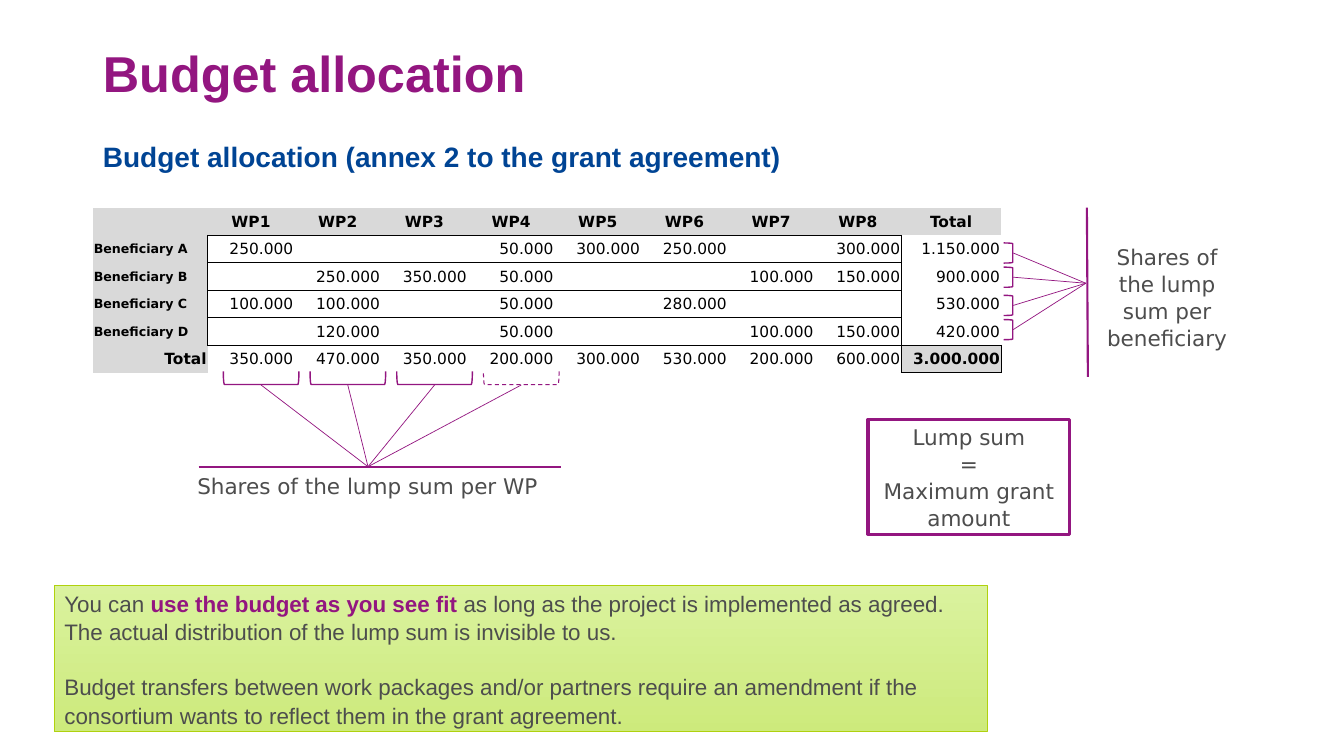
from lxml.etree import SubElement
from pptx import Presentation
from pptx.dml.color import RGBColor
from pptx.enum.dml import MSO_LINE
from pptx.enum.shapes import MSO_CONNECTOR, MSO_SHAPE
from pptx.enum.text import MSO_ANCHOR, MSO_AUTO_SIZE, PP_ALIGN
from pptx.oxml.ns import qn
from pptx.util import Inches, Pt

COLORS = {
    "purple": "931680", "blue": "004494", "gray": "4D4D4D", "black": "000000",
    "white": "FFFFFF", "shade": "D9D9D9", "lime_top": "DAF29E",
    "lime_bottom": "CDEA7C", "lime_edge": "B0D10E",
}
SANS, CAPTION = "Arial", "DejaVu Sans"
FIRST_WIDTH, PACKAGE_WIDTH, TOTAL_WIDTH, ROW_HEIGHT = 1.14, 0.86, 0.99, 0.273
BUDGET = [
    ["", "WP1", "WP2", "WP3", "WP4", "WP5", "WP6", "WP7", "WP8", "Total"],
    ["Beneficiary A", "250.000", "", "", "50.000", "300.000", "250.000", "", "300.000", "1.150.000"],
    ["Beneficiary B", "", "250.000", "350.000", "50.000", "", "", "100.000", "150.000", "900.000"],
    ["Beneficiary C", "100.000", "100.000", "", "50.000", "", "280.000", "", "", "530.000"],
    ["Beneficiary D", "", "120.000", "", "50.000", "", "", "100.000", "150.000", "420.000"],
    ["Total", "350.000", "470.000", "350.000", "200.000", "300.000", "530.000", "200.000", "600.000",
     "3.000.000"],
]


def color(name):
    return RGBColor.from_string(COLORS[name])


def add_span(para, text, size, font, tint, bold=False):
    span = para.add_run()
    span.text = text
    span.font.size = Pt(size)
    span.font.name = font
    span.font.bold = bold
    span.font.color.rgb = color(tint)


def add_line(page, start, end, width):
    line = page.shapes.add_connector(
        MSO_CONNECTOR.STRAIGHT, *(Inches(value) for value in (*start, *end)))
    line.line.color.rgb = color("purple")
    line.line.width = Pt(width)
    SubElement(line._element.spPr, qn("a:effectLst"))


def add_box(page, kind, left, top, width, height, edge, edge_width):
    box = page.shapes.add_shape(
        kind, Inches(left), Inches(top), Inches(width), Inches(height))
    box.shadow.inherit = False
    box.fill.solid()
    box.fill.fore_color.rgb = color("white")
    box.line.color.rgb = color(edge)
    box.line.width = Pt(edge_width)
    return box


def add_bracket(page, center_x, center_y, width, height, rotation, dashed=False):
    bracket = add_box(page, MSO_SHAPE.LEFT_BRACKET, center_x - width / 2,
                      center_y - height / 2, width, height, "purple", 0.75 if dashed else 1)
    bracket.rotation = rotation
    if dashed:
        bracket.fill.background()
        bracket.line.dash_style = MSO_LINE.DASH


def write_caption(frame, lines):
    frame.word_wrap = True
    for index, text in enumerate(lines):
        para = frame.add_paragraph() if index else frame.paragraphs[0]
        para.alignment = PP_ALIGN.CENTER
        para.line_spacing = 1.04
        add_span(para, text, 15.4, CAPTION, "gray")


def add_caption(page, left, top, width, height, text):
    box = page.shapes.add_textbox(
        Inches(left), Inches(top), Inches(width), Inches(height))
    write_caption(box.text_frame, [text])


def fill_placeholder(holder, left, top, width, height, text, size, tint):
    holder.left, holder.top = Inches(left), Inches(top)
    holder.width, holder.height = Inches(width), Inches(height)
    frame = holder.text_frame
    frame.auto_size = MSO_AUTO_SIZE.NONE
    frame.word_wrap = True
    para = frame.paragraphs[0]
    para.alignment = PP_ALIGN.LEFT
    para.space_before = Pt(0)
    add_span(para, text, size, SANS, tint, True)
    return frame


def add_headings(page, left, top, width):
    title, body = page.placeholders
    frame = fill_placeholder(title, left, top, width, 0.52, "Budget allocation", 36, "purple")
    frame.vertical_anchor = MSO_ANCHOR.BOTTOM
    frame.margin_bottom = 0
    frame.paragraphs[0].line_spacing = 0.9
    frame = fill_placeholder(body, left, top + 0.82, width, 0.5,
                             "Budget allocation (annex 2 to the grant agreement)", 20, "blue")
    props = frame.paragraphs[0]._p.get_or_add_pPr()
    props.set("marL", "0")
    props.set("indent", "0")
    SubElement(props, qn("a:buNone"))


def has_row_line(line, column):
    return (1 <= column <= 8 and 1 <= line <= 5) or (column == 9 and line >= 5)


def has_column_line(line, row):
    return ((line == 1 and 1 <= row <= 4) or (line == 9 and 1 <= row <= 5)
            or (line == 10 and row == 5))


def draw_borders(cell, row, column):
    sides = {
        "a:lnL": has_column_line(column, row), "a:lnR": has_column_line(column + 1, row),
        "a:lnT": has_row_line(row, column), "a:lnB": has_row_line(row + 1, column),
    }
    props = cell._tc.get_or_add_tcPr()
    for tag, visible in sides.items():
        side = SubElement(props, qn(tag), w=str(Pt(0.5)))
        if visible:
            paint = SubElement(side, qn("a:solidFill"))
            SubElement(paint, qn("a:srgbClr"), val=COLORS["black"])
        else:
            SubElement(side, qn("a:noFill"))


def fill_cell(cell, row, column, text):
    cell.margin_left = cell.margin_right = cell.margin_top = Inches(0.01)
    cell.margin_bottom = 0
    cell.vertical_anchor = MSO_ANCHOR.MIDDLE
    draw_borders(cell, row, column)
    heading = row == 0 or column == 0 or (row, column) == (5, 9)
    cell.fill.solid()
    cell.fill.fore_color.rgb = color("shade" if heading else "white")
    para = cell.text_frame.paragraphs[0]
    beneficiary = column == 0 and 1 <= row <= 4
    if row == 0:
        para.alignment = PP_ALIGN.CENTER
    else:
        para.alignment = PP_ALIGN.LEFT if beneficiary else PP_ALIGN.RIGHT
    if text:
        add_span(para, text, 9 if beneficiary else 11, CAPTION, "black", heading)
    else:
        SubElement(para._p, qn("a:endParaRPr"), sz="1100")


def add_budget_table(page, left, top):
    widths = [FIRST_WIDTH] + [PACKAGE_WIDTH] * 8 + [TOTAL_WIDTH]
    table = page.shapes.add_table(
        len(BUDGET), len(widths), Inches(left), Inches(top),
        Inches(sum(widths)), Inches(ROW_HEIGHT * len(BUDGET))).table
    for column, width in zip(table.columns, widths):
        column.width = Inches(width)
    for row, values in enumerate(BUDGET):
        table.rows[row].height = Inches(ROW_HEIGHT)
        for column, text in enumerate(values):
            fill_cell(table.cell(row, column), row, column, text)


def add_package_shares(page, left, top):
    hub = (left + 1.68, top + 0.88)
    for index in range(4):
        center = left + 0.62 + index * PACKAGE_WIDTH
        add_bracket(page, center, top, 0.13, 0.75, 270, dashed=index == 3)
        add_line(page, (center, top + 0.07), hub, 0.5)
    add_line(page, (left, hub[1]), (left + 3.59, hub[1]), 1.5)
    add_caption(page, hub[0] - 2.39, hub[1], 4.77, 0.36, "Shares of the lump sum per WP")


def add_beneficiary_shares(page, left, top):
    hub = (left + 0.82, top + 0.75)
    for offset in (0.45, 0.69, 0.97, 1.21):
        add_bracket(page, left + 0.05, top + offset, 0.09, 0.2, 180)
        add_line(page, (left + 0.1, top + offset), hub, 0.5)
    add_line(page, (left + 0.83, top), (left + 0.84, top + 1.68), 1.5)
    add_caption(page, left + 0.9, top + 0.3, 1.45, 1.14, "Shares of the lump sum per beneficiary")


def add_lump_sum(page, left, top, width, height):
    box = add_box(page, MSO_SHAPE.RECTANGLE, left, top, width, height, "purple", 2.25)
    write_caption(box.text_frame, ["Lump sum", "=", "Maximum grant amount"])


def add_note(page, left, top, width, height):
    box = add_box(page, MSO_SHAPE.RECTANGLE, left, top, width, height, "lime_edge", 0.5)
    box.fill.gradient()
    box.fill.gradient_angle = 270
    for stop, tint in zip(box.fill.gradient_stops, ("lime_top", "lime_bottom")):
        stop.color.rgb = color(tint)
    frame = box.text_frame
    frame.word_wrap = True
    first, second = frame.paragraphs[0], frame.add_paragraph()
    for para in (first, second):
        para.alignment = PP_ALIGN.LEFT
        para.line_spacing = 1.05
    second.space_before = Pt(19.3)
    add_span(first, "You can ", 16, SANS, "gray")
    add_span(first, "use the budget as you see fit ", 16, SANS, "purple", True)
    add_span(first, "as long as the project is implemented as agreed. The actual "
             "distribution of the lump sum is invisible to us.", 16, SANS, "gray")
    add_span(second, "Budget transfers between work packages and/or partners require an amendment "
             "if the consortium wants to reflect them in the grant agreement.", 16, SANS, "gray")


def main():
    deck = Presentation()
    deck.slide_width, deck.slide_height = Inches(13.33), Inches(7.5)
    page = deck.slides.add_slide(deck.slide_layouts[1])
    add_headings(page, 0.92, 0.51, 11.5)
    add_budget_table(page, 0.92, 2.06)
    add_package_shares(page, 1.97, 3.75)
    add_lump_sum(page, 8.61, 4.16, 2, 1.14)
    add_beneficiary_shares(page, 9.95, 2.06)
    add_note(page, 0.54, 5.81, 9.25, 1.45)
    deck.save("out.pptx")


if __name__ == "__main__":
    main()
